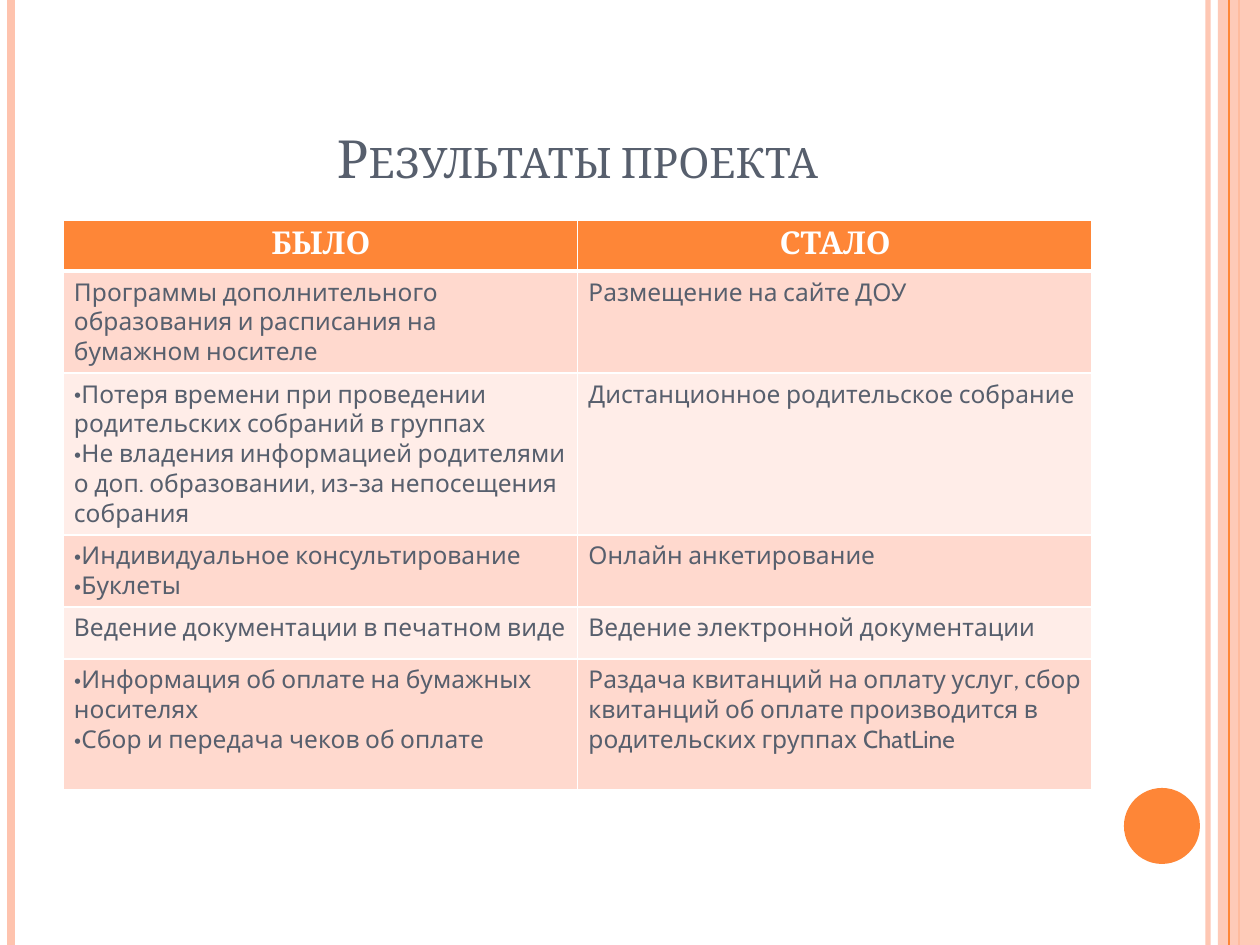
from lxml.etree import SubElement
from pptx import Presentation
from pptx.dml.color import RGBColor
from pptx.enum.shapes import MSO_CONNECTOR, MSO_SHAPE
from pptx.enum.text import MSO_ANCHOR, PP_ALIGN
from pptx.oxml.ns import qn
from pptx.util import Pt

SCALE = 914400 / 126
WIDE, HIGH = 1260, 945
ORANGE, PINK, SLATE, WHITE = "FE8637", "FEC3AE", "575F6D", "FFFFFF"
BANDS = ["FFD9CE", "FFEDE8"]
HEAD, BODY = "Cambria", "Cabin"

# A list marks a bulleted cell, a string a plain one.
ROWS = [
    ("Программы дополнительного образования и расписания на бумажном носителе",
     "Размещение на сайте ДОУ"),
    (["Потеря времени при проведении родительских собраний в группах",
      "Не владения информацией родителями о доп. образовании, "
      "из-за непосещения собрания"],
     "Дистанционное родительское собрание"),
    (["Индивидуальное консультирование", "Буклеты"],
     "Онлайн анкетирование"),
    ("Ведение документации в печатном виде",
     "Ведение электронной документации"),
    (["Информация об оплате на бумажных носителях",
      "Сбор и передача чеков об оплате"],
     "Раздача квитанций на оплату услуг, сбор квитанций об оплате "
     "производится в родительских группах ChatLine"),
]
HEIGHTS = [51, 102, 162, 72, 52, 131]


def px(n):
    return round(n * SCALE)


def color(code):
    return RGBColor.from_string(code)


def fade(shape, percent):
    """Set the opacity of the shape's first colour."""
    tint = next(shape._element.spPr.iter(qn("a:srgbClr")))
    SubElement(tint, qn("a:alpha"), val=str(percent * 1000))


def border(cell, bottom):
    props = cell._tc.get_or_add_tcPr()
    for side, width in (("L", 1), ("R", 1), ("T", 1), ("B", bottom)):
        line = SubElement(props, qn("a:ln" + side), w=str(Pt(width)))
        fill = SubElement(line, qn("a:solidFill"))
        SubElement(fill, qn("a:srgbClr"), val=WHITE)


def bullet(par):
    props = par._p.get_or_add_pPr()
    props.set("marL", "0")
    props.set("indent", "0")
    SubElement(props, qn("a:buFont"), typeface=BODY)
    SubElement(props, qn("a:buChar"), char="•")


class Page:
    def __init__(self, deck):
        self.shapes = deck.slides.add_slide(deck.slide_layouts[6]).shapes

    def style(self, par, face, size, code, bold=False):
        font = par.font
        font.name, font.size, font.bold = face, Pt(size), bold
        font.color.rgb = color(code)

    def rule(self, x, code, width):
        """Draw a vertical line over the full height."""
        line = self.shapes.add_connector(
            MSO_CONNECTOR.STRAIGHT, px(x), 0, px(x), px(HIGH))
        line.line.color.rgb = color(code)
        line.line.width = Pt(width)
        SubElement(line._element.spPr, qn("a:effectLst"))
        return line

    def shape(self, kind, x, y, w, h, code):
        item = self.shapes.add_shape(kind, px(x), px(y), px(w), px(h))
        item.shadow.inherit = False
        item.fill.solid()
        item.fill.fore_color.rgb = color(code)
        item.line.fill.background()
        return item

    def title(self, text, x, y, w, h):
        frame = self.shapes.add_textbox(px(x), px(y), px(w), px(h)).text_frame
        frame.word_wrap = True
        frame.vertical_anchor = MSO_ANCHOR.BOTTOM
        par = frame.paragraphs[0]
        par.alignment = PP_ALIGN.CENTER
        self.style(par, HEAD, 30, SLATE)
        run = par.add_run()
        run.text = text
        run._r.get_or_add_rPr().set("cap", "small")

    def cell(self, cell, text, code, head=False):
        border(cell, 3 if head else 1)
        cell.fill.solid()
        cell.fill.fore_color.rgb = color(code)
        cell.margin_left, cell.margin_right = px(11), px(10)
        listed = isinstance(text, list)
        cell.text = "\n".join(text) if listed else text
        for par in cell.text_frame.paragraphs:
            if listed:
                bullet(par)
            if head:
                par.alignment = PP_ALIGN.CENTER
                self.style(par, HEAD, 18, WHITE, True)
            else:
                self.style(par, BODY, 14, SLATE)

    def table(self, x, y, w, heads, rows, heights):
        grid = self.shapes.add_table(
            len(heights), len(heads), px(x), px(y), px(w), px(sum(heights))).table
        for row, high in zip(grid.rows, heights):
            row.height = px(high)
        for c, text in enumerate(heads):
            self.cell(grid.cell(0, c), text, ORANGE, True)
        for r, row in enumerate(rows):
            for c, text in enumerate(row):
                self.cell(grid.cell(r + 1, c), text, BANDS[r % 2])


def main():
    deck = Presentation()
    deck.slide_width, deck.slide_height = px(WIDE), px(HIGH)
    page = Page(deck)
    fade(page.rule(1208, PINK, 3), 93)
    page.rule(11, PINK, 4.5)
    page.rule(1239, ORANGE, 1.5)
    fade(page.shape(MSO_SHAPE.RECTANGLE, 1218, 0, 42, HIGH, PINK), 87)
    page.rule(1229, ORANGE, 0.75)
    page.shape(MSO_SHAPE.OVAL, 1124, 788, 76, 76, ORANGE)
    page.title("Результаты проекта", 63, 38, 1029, 157)
    page.table(63, 220, 1029, ["БЫЛО", "СТАЛО"], ROWS, HEIGHTS)
    deck.save("out.pptx")


if __name__ == "__main__":
    main()
